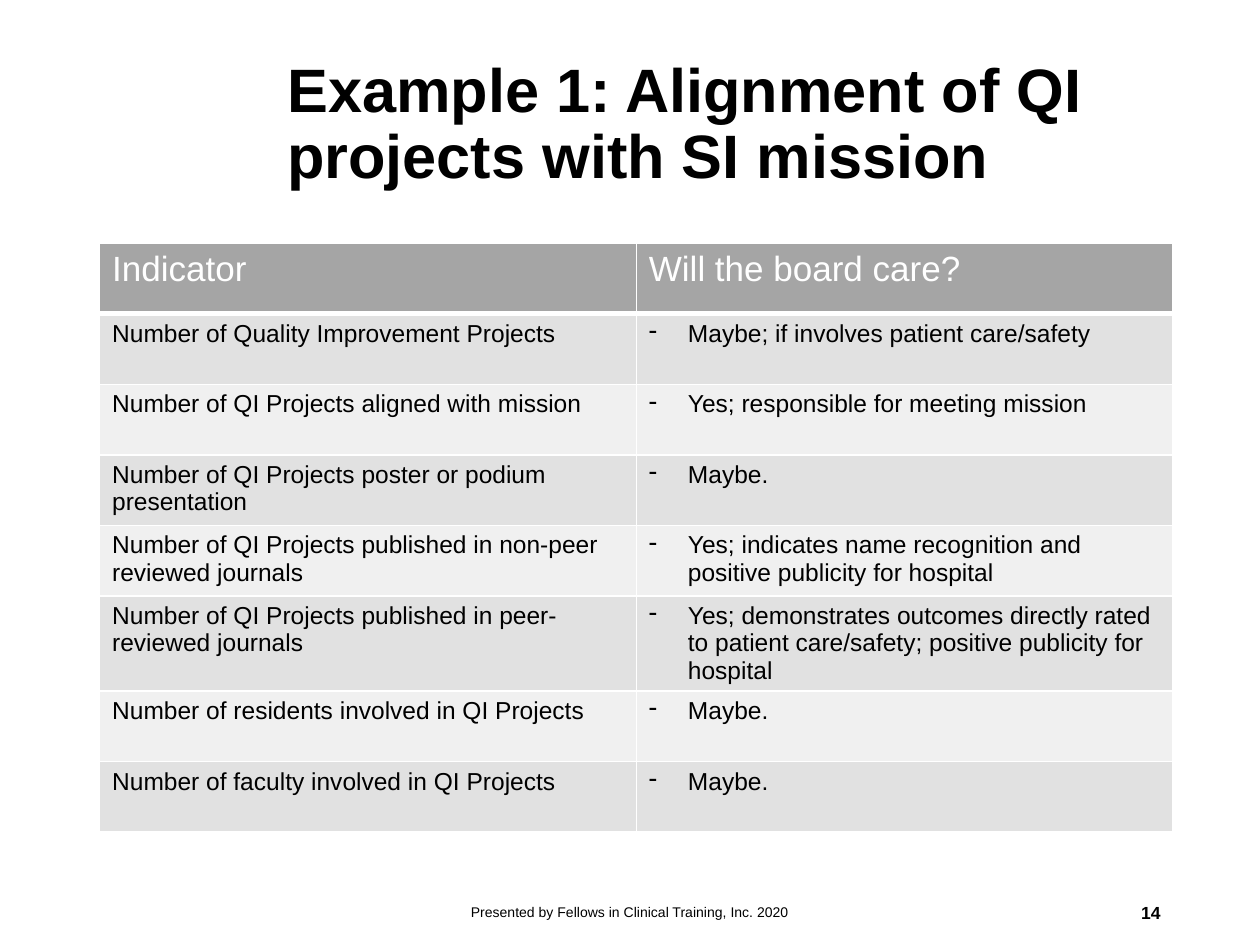
from dataclasses import dataclass

from lxml.etree import SubElement
from pptx import Presentation
from pptx.dml.color import RGBColor
from pptx.enum.text import MSO_ANCHOR, MSO_AUTO_SIZE, PP_ALIGN
from pptx.oxml.ns import qn
from pptx.util import Inches, Pt


@dataclass(frozen=True)
class Theme:
    font: str = "Arial"
    ink: str = "000000"
    paper: str = "FFFFFF"
    header: str = "A5A5A5"
    bands: tuple[str, str] = ("E1E1E1", "F0F0F0")
    title_size: float = 35
    header_size: float = 20
    body_size: float = 14
    footer_size: float = 8
    number_size: float = 10
    thin_border: float = 1
    thick_border: float = 3
    bullet_indent: float = 0.31


@dataclass(frozen=True)
class Box:
    left: float
    top: float
    width: float
    height: float

    def lengths(self):
        return [Inches(value) for value in (self.left, self.top, self.width, self.height)]


@dataclass(frozen=True)
class Indicator:
    name: str
    answer: str


@dataclass(frozen=True)
class FooterItem:
    text: str
    box: Box
    size: float
    alignment: PP_ALIGN
    bold: bool = False


THEME = Theme()
SLIDE_WIDTH, SLIDE_HEIGHT = 10, 7.5
RIGHT_EDGE = 9.31
FOOTER_TOP, FOOTER_HEIGHT = 7.04, 0.4
TITLE_BOX = Box(2.18, 0.27, 7.14, 1.45)
ROW_HEIGHT = 0.56
TABLE_LEFT, TABLE_TOP = 0.79, 1.93
COLUMN_WIDTH = (RIGHT_EDGE - TABLE_LEFT) / 2

HEADINGS = ("Indicator", "Will the board care?")
INDICATORS = (
    Indicator("Number of Quality Improvement Projects", "Maybe; if involves patient care/safety"),
    Indicator("Number of QI Projects aligned with mission", "Yes; responsible for meeting mission"),
    Indicator("Number of QI Projects poster or podium presentation", "Maybe."),
    Indicator(
        "Number of QI Projects published in non-peer reviewed journals",
        "Yes; indicates name recognition and positive publicity for hospital",
    ),
    Indicator(
        "Number of QI Projects published in peer-reviewed journals",
        "Yes; demonstrates outcomes directly rated to patient care/safety; "
        "positive publicity for hospital",
    ),
    Indicator("Number of residents involved in QI Projects", "Maybe."),
    Indicator("Number of faculty involved in QI Projects", "Maybe."),
)
FOOTER = (
    FooterItem(
        "Presented by Fellows in Clinical Training, Inc. 2020",
        Box(3.31, FOOTER_TOP, 3.38, FOOTER_HEIGHT), THEME.footer_size, PP_ALIGN.CENTER,
    ),
    FooterItem(
        "14", Box(RIGHT_EDGE - 2.25, FOOTER_TOP, 2.25, FOOTER_HEIGHT),
        THEME.number_size, PP_ALIGN.RIGHT, True,
    ),
)


def add_run(paragraph, text: str, size: float, color: str, bold: bool = False) -> None:
    run = paragraph.add_run()
    run.text = text
    run.font.name = THEME.font
    run.font.size = Pt(size)
    run.font.bold = bold
    run.font.color.rgb = RGBColor.from_string(color)


def set_frame(frame, vertical_margin: float) -> None:
    frame.word_wrap = True
    frame.auto_size = MSO_AUTO_SIZE.NONE
    frame.vertical_anchor = MSO_ANCHOR.MIDDLE
    frame.margin_left = frame.margin_right = Inches(0.1)
    frame.margin_top = frame.margin_bottom = Inches(vertical_margin)


def add_title(slide, text: str) -> None:
    title = slide.shapes.title
    title.left, title.top, title.width, title.height = TITLE_BOX.lengths()
    set_frame(title.text_frame, 0.1)
    paragraph = title.text_frame.paragraphs[0]
    paragraph.alignment = PP_ALIGN.LEFT
    paragraph.line_spacing = 0.9
    add_run(paragraph, text, THEME.title_size, THEME.ink, True)


def add_dash(paragraph) -> None:
    properties = paragraph._p.get_or_add_pPr()
    indent = Inches(THEME.bullet_indent)
    properties.set("marL", str(indent))
    properties.set("indent", str(-indent))
    bullet_color = SubElement(properties, qn("a:buClr"))
    SubElement(bullet_color, qn("a:srgbClr"), val=THEME.ink)
    SubElement(properties, qn("a:buFontTx"))
    SubElement(properties, qn("a:buChar"), char="-")


def set_cell(cell, fill: str, bottom_border: float) -> None:
    properties = cell._tc.get_or_add_tcPr()
    for side in "LRTB":
        width = bottom_border if side == "B" else THEME.thin_border
        border = SubElement(properties, qn(f"a:ln{side}"), w=str(Pt(width)))
        border_fill = SubElement(border, qn("a:solidFill"))
        SubElement(border_fill, qn("a:srgbClr"), val=THEME.paper)
    cell.fill.solid()
    cell.fill.fore_color.rgb = RGBColor.from_string(fill)


def add_indicator_table(slide) -> None:
    row_count = len(INDICATORS) + 1
    box = Box(TABLE_LEFT, TABLE_TOP, COLUMN_WIDTH * 2, ROW_HEIGHT * row_count)
    table = slide.shapes.add_table(row_count, 2, *box.lengths()).table
    for column, heading in enumerate(HEADINGS):
        cell = table.cell(0, column)
        set_cell(cell, THEME.header, THEME.thick_border)
        add_run(cell.text_frame.paragraphs[0], heading, THEME.header_size, THEME.paper)
    for row, indicator in enumerate(INDICATORS, start=1):
        for column, text in enumerate((indicator.name, indicator.answer)):
            cell = table.cell(row, column)
            set_cell(cell, THEME.bands[(row - 1) % 2], THEME.thin_border)
            paragraph = cell.text_frame.paragraphs[0]
            if column == 1:
                add_dash(paragraph)
            add_run(paragraph, text, THEME.body_size, THEME.ink)


def add_footer_item(slide, item: FooterItem) -> None:
    frame = slide.shapes.add_textbox(*item.box.lengths()).text_frame
    set_frame(frame, 0.05)
    paragraph = frame.paragraphs[0]
    paragraph.alignment = item.alignment
    add_run(paragraph, item.text, item.size, THEME.ink, item.bold)


def main() -> None:
    presentation = Presentation()
    presentation.slide_width = Inches(SLIDE_WIDTH)
    presentation.slide_height = Inches(SLIDE_HEIGHT)
    slide = presentation.slides.add_slide(presentation.slide_layouts.get_by_name("Title Only"))
    add_title(slide, "Example 1: Alignment of QI projects with SI mission")
    add_indicator_table(slide)
    for item in FOOTER:
        add_footer_item(slide, item)
    presentation.save("out.pptx")


if __name__ == "__main__":
    main()
